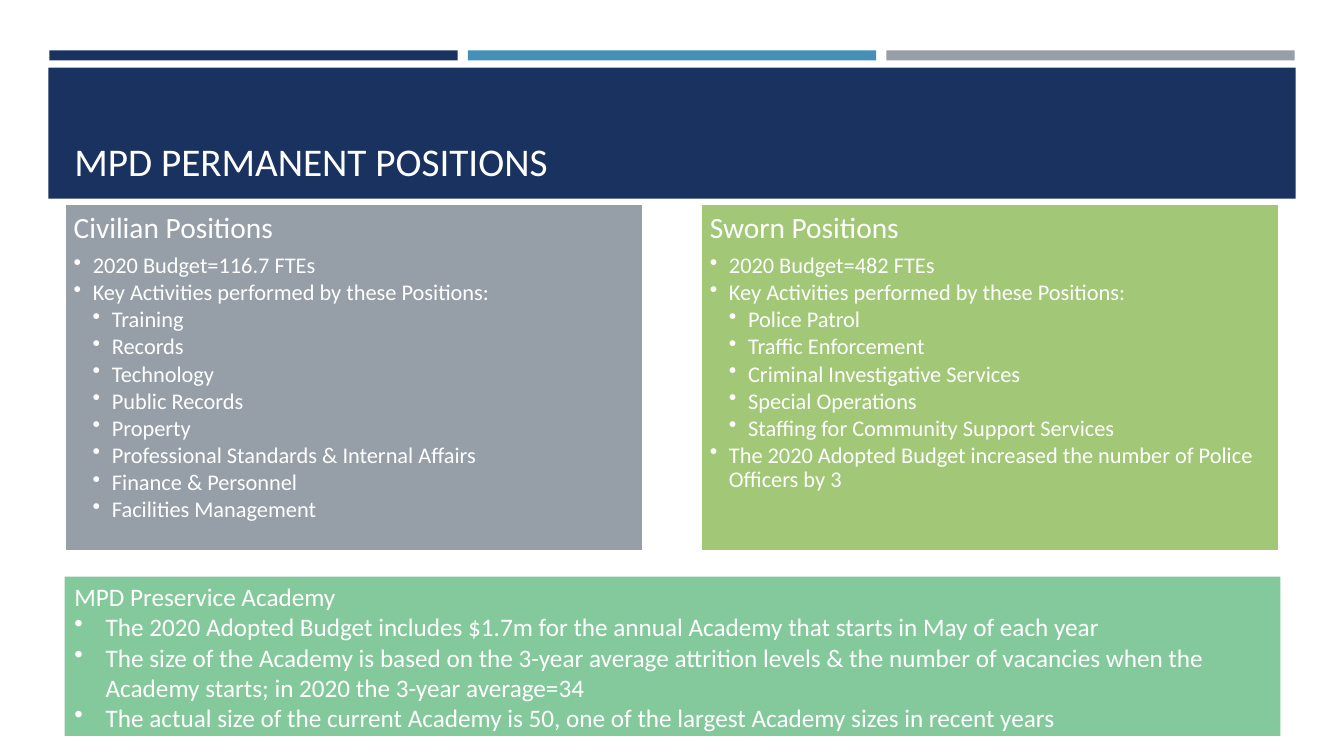
from lxml import etree
from pptx import Presentation
from pptx.dml.color import RGBColor
from pptx.enum import shapes, text
from pptx.oxml import ns
from pptx.util import Inches, Pt

FONT = "Calibri"
WHITE, NAVY, BLUE, GRAY = "FFFFFF", "1A3260", "4590B8", "969FA7"
LIME, GREEN = "A2C777", "84C99C"

CIVILIAN_ITEMS = [
    (1, "2020 Budget=116.7 FTEs"),
    (1, "Key Activities performed by these Positions:"),
    (2, "Training"),
    (2, "Records"),
    (2, "Technology"),
    (2, "Public Records"),
    (2, "Property"),
    (2, "Professional Standards & Internal Affairs"),
    (2, "Finance & Personnel"),
    (2, "Facilities Management"),
]
SWORN_ITEMS = [
    (1, "2020 Budget=482 FTEs"),
    (1, "Key Activities performed by these Positions:"),
    (2, "Police Patrol"),
    (2, "Traffic Enforcement"),
    (2, "Criminal Investigative Services"),
    (2, "Special Operations"),
    (2, "Staffing for Community Support Services"),
    (1, "The 2020 Adopted Budget increased the number of Police Officers by 3"),
]
ACADEMY_ITEMS = [
    "The 2020 Adopted Budget includes $1.7m for the annual Academy that starts in May of each year",
    "The size of the Academy is based on the 3-year average attrition levels & the number of "
    "vacancies when the Academy starts; in 2020 the 3-year average=34",
    "The actual size of the current Academy is 50, one of the largest Academy sizes in recent years",
]


def color(hex_string):
    return RGBColor.from_string(hex_string)


def add_box(slide, left, top, width, height, fill, line=None):
    box = slide.shapes.add_shape(
        shapes.MSO_SHAPE.RECTANGLE, Inches(left), Inches(top), Inches(width), Inches(height))
    box.shadow.inherit = False
    box.fill.solid()
    box.fill.fore_color.rgb = color(fill)
    if line:
        box.line.color.rgb = color(line)
        box.line.width = Pt(1.75)
    else:
        box.line.fill.background()
    return box


def prepare_frame(shape, anchor=text.MSO_ANCHOR.TOP, inset=None):
    """Wrap and anchor the text; inset, if given, applies to all four sides."""
    frame = shape.text_frame
    frame.word_wrap = True
    frame.vertical_anchor = anchor
    if inset is not None:
        frame.margin_left = frame.margin_right = Inches(inset)
        frame.margin_top = frame.margin_bottom = Inches(inset)
    return frame


def add_text(frame, words, size, level=0, indent=0, hanging=0, line_spacing=None, after=0):
    """Fill the empty first paragraph or add one; a hanging indent brings a bullet."""
    first = frame.paragraphs[0]
    paragraph = frame.add_paragraph() if first.runs else first
    paragraph.alignment = text.PP_ALIGN.LEFT
    paragraph.level = level
    paragraph.line_spacing = line_spacing
    paragraph.space_after = Pt(after)
    if hanging:
        properties = paragraph._p.get_or_add_pPr()
        properties.set("marL", str(Inches(indent)))
        properties.set("indent", str(-Inches(hanging)))
        etree.SubElement(properties, ns.qn("a:buChar")).set("char", "•")
    run = paragraph.add_run()
    run.text = words
    run.font.name = FONT
    run.font.size = Pt(size)
    run.font.color.rgb = color(WHITE)


def add_header(slide, title):
    for column, fill in enumerate([NAVY, BLUE, GRAY]):
        add_box(slide, 0.49 + 4.15 * column, 0.5, 4.05, 0.1, fill)
    add_box(slide, 0.48, 0.67, 12.37, 1.3, NAVY)
    title_box = slide.shapes.add_textbox(Inches(0.64), Inches(0.77), Inches(12.06), Inches(1.11))
    add_text(prepare_frame(title_box, text.MSO_ANCHOR.BOTTOM), title, 28)


def add_positions_panel(slide, left, fill, heading, items):
    panel = add_box(slide, left, 2.02, 5.74, 3.45, fill, line=WHITE)
    frame = prepare_frame(panel, inset=0.09)
    add_text(frame, heading, 21, line_spacing=0.9, after=7)
    for level, words in items:
        add_text(frame, words, 16, level=level, indent=0.19 * level, hanging=0.19,
                 line_spacing=0.9, after=2.1)


def add_academy_panel(slide):
    frame = prepare_frame(add_box(slide, 0.64, 5.72, 12.06, 1.58, GREEN))
    add_text(frame, "MPD Preservice Academy", 18)
    for words in ACADEMY_ITEMS:
        add_text(frame, words, 18, indent=0.31, hanging=0.31)


def main():
    presentation = Presentation()
    presentation.slide_width = Inches(13.33)
    presentation.slide_height = Inches(7.5)
    slide = presentation.slides.add_slide(presentation.slide_layouts[6])
    add_header(slide, "MPD PERMANENT POSITIONS")
    add_positions_panel(slide, 0.64, GRAY, "Civilian Positions", CIVILIAN_ITEMS)
    add_positions_panel(slide, 6.95, LIME, "Sworn Positions", SWORN_ITEMS)
    add_academy_panel(slide)
    presentation.save("out.pptx")


if __name__ == "__main__":
    main()
